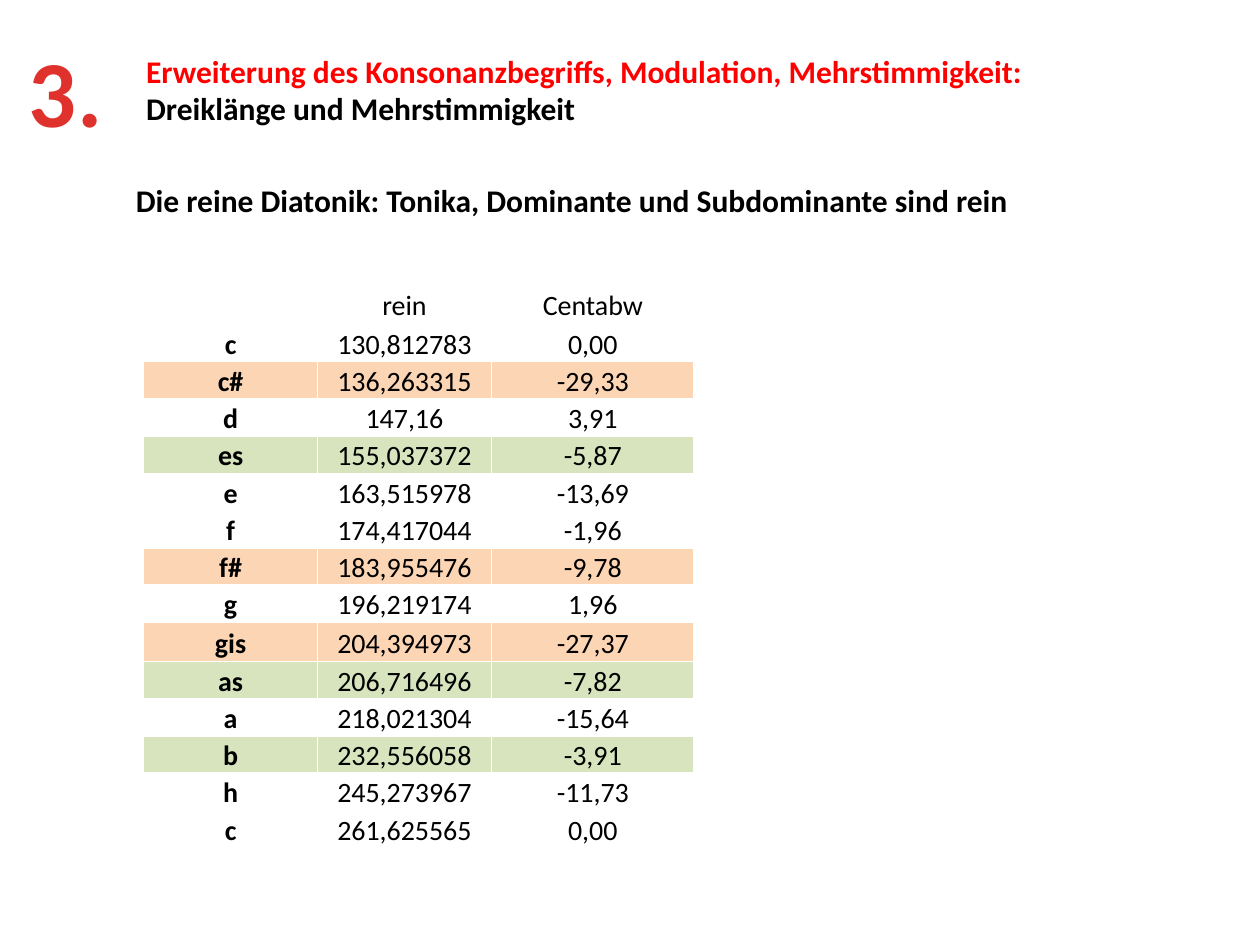
from dataclasses import dataclass
from typing import Optional

from pptx import Presentation
from pptx.dml.color import RGBColor
from pptx.enum.text import MSO_ANCHOR as Anchor, MSO_AUTO_SIZE as AutoSize, PP_ALIGN as Align
from pptx.util import Inches, Pt

COLUMNS, ROWS = 100, 75
FONT = "Calibri"
BLACK, RED, WHITE = "000000", "FF0000", "FFFFFF"
ORANGE, GREEN = "FCD5B5", "D7E4BD"
COLUMN_WIDTHS = (13.8, 13.8, 16.1)
ROW_HEIGHT, TALL_ROW_HEIGHT = 2.96, 3.1


@dataclass(frozen=True)
class Area:
    column: float
    row: float
    columns: float
    rows: float


@dataclass(frozen=True)
class Tone:
    name: str
    frequency: str
    cents: str
    fill: str = WHITE
    tall: bool = False


TONES = (
    Tone("", "rein", "Centabw", tall=True),
    Tone("c", "130,812783", "0,00", tall=True),
    Tone("c#", "136,263315", "-29,33", ORANGE),
    Tone("d", "147,16", "3,91"),
    Tone("es", "155,037372", "-5,87", GREEN),
    Tone("e", "163,515978", "-13,69"),
    Tone("f", "174,417044", "-1,96"),
    Tone("f#", "183,955476", "-9,78", ORANGE),
    Tone("g", "196,219174", "1,96"),
    Tone("gis", "204,394973", "-27,37", ORANGE, tall=True),
    Tone("as", "206,716496", "-7,82", GREEN),
    Tone("a", "218,021304", "-15,64"),
    Tone("b", "232,556058", "-3,91", GREEN),
    Tone("h", "245,273967", "-11,73"),
    Tone("c", "261,625565", "0,00"),
)

deck = Presentation()
deck.slide_width, deck.slide_height = Inches(10), Inches(7.5)
page = deck.slides.add_slide(deck.slide_layouts[5])


def across(columns: float) -> int:
    return round(deck.slide_width * columns / COLUMNS)


def down(rows: float) -> int:
    return round(deck.slide_height * rows / ROWS)


def bounds(area: Area) -> tuple:
    return across(area.column), down(area.row), across(area.columns), down(area.rows)


def paint(fill, color: str) -> None:
    fill.solid()
    fill.fore_color.rgb = RGBColor.from_string(color)


def write(para, text: str, *, size: float, color: Optional[str] = BLACK,
          bold: bool = False, align=Align.LEFT):
    para.alignment = align
    span = para.add_run()
    span.text = text
    span.font.name, span.font.size, span.font.bold = FONT, Pt(size), bold
    if color:
        paint(span.font.fill, color)
    return span


def fit_frame(box):
    frame = box.text_frame
    frame.word_wrap = False
    frame.auto_size = AutoSize.SHAPE_TO_FIT_TEXT
    frame.vertical_anchor = Anchor.TOP
    return frame


def add_text_frame(area: Area):
    return fit_frame(page.shapes.add_textbox(*bounds(area)))


def draw_title(area: Area) -> None:
    title = page.shapes.title
    title.left, title.top, title.width, title.height = bounds(area)
    paint(title.fill, WHITE)
    frame = fit_frame(title)
    write(frame.paragraphs[0], "Erweiterung des Konsonanzbegriffs, Modulation, Mehrstimmigkeit:",
          size=18, color=RED, bold=True)
    write(frame.add_paragraph(), "Dreiklänge und Mehrstimmigkeit", size=18, bold=True)


def draw_chapter_number(area: Area) -> None:
    para = add_text_frame(area).paragraphs[0]
    span = write(para, "3.", size=54, color=None, bold=True, align=Align.CENTER)
    fill = span.font.fill
    fill.gradient()
    fill.gradient_angle = 270
    for stop, (position, color) in zip(fill.gradient_stops, ((0.25, "E0322D"), (1, "A2201C"))):
        stop.position = position
        stop.color.rgb = RGBColor.from_string(color)
    span.font._element.set("spc", "50")


def draw_tone_table(area: Area) -> None:
    table = page.shapes.add_table(len(TONES), len(COLUMN_WIDTHS), *bounds(area)).table
    table.first_row = table.horz_banding = False
    for column, width in zip(table.columns, COLUMN_WIDTHS):
        column.width = across(width)
    for row, tone in zip(table.rows, TONES):
        row.height = down(TALL_ROW_HEIGHT if tone.tall else ROW_HEIGHT)
        for index, (cell, text) in enumerate(zip(row.cells, (tone.name, tone.frequency, tone.cents))):
            paint(cell.fill, tone.fill)
            cell.vertical_anchor = Anchor.BOTTOM
            cell.margin_left = cell.margin_right = cell.margin_top = Inches(0.01)
            cell.margin_bottom = 0
            write(cell.text_frame.paragraphs[0], text, size=16, bold=index == 0, align=Align.CENTER)


draw_title(Area(10.6, 3.6, 72.2, 7.1))
subtitle = add_text_frame(Area(9.8, 13.9, 71.8, 4))
write(subtitle.paragraphs[0], "Die reine Diatonik: Tonika, Dominante und Subdominante sind rein",
      size=18, bold=True)
draw_chapter_number(Area(1.2, 2.1, 8, 10.1))
draw_tone_table(Area(11.4, 22.5, 43.7, 44.9))
deck.save("out.pptx")
